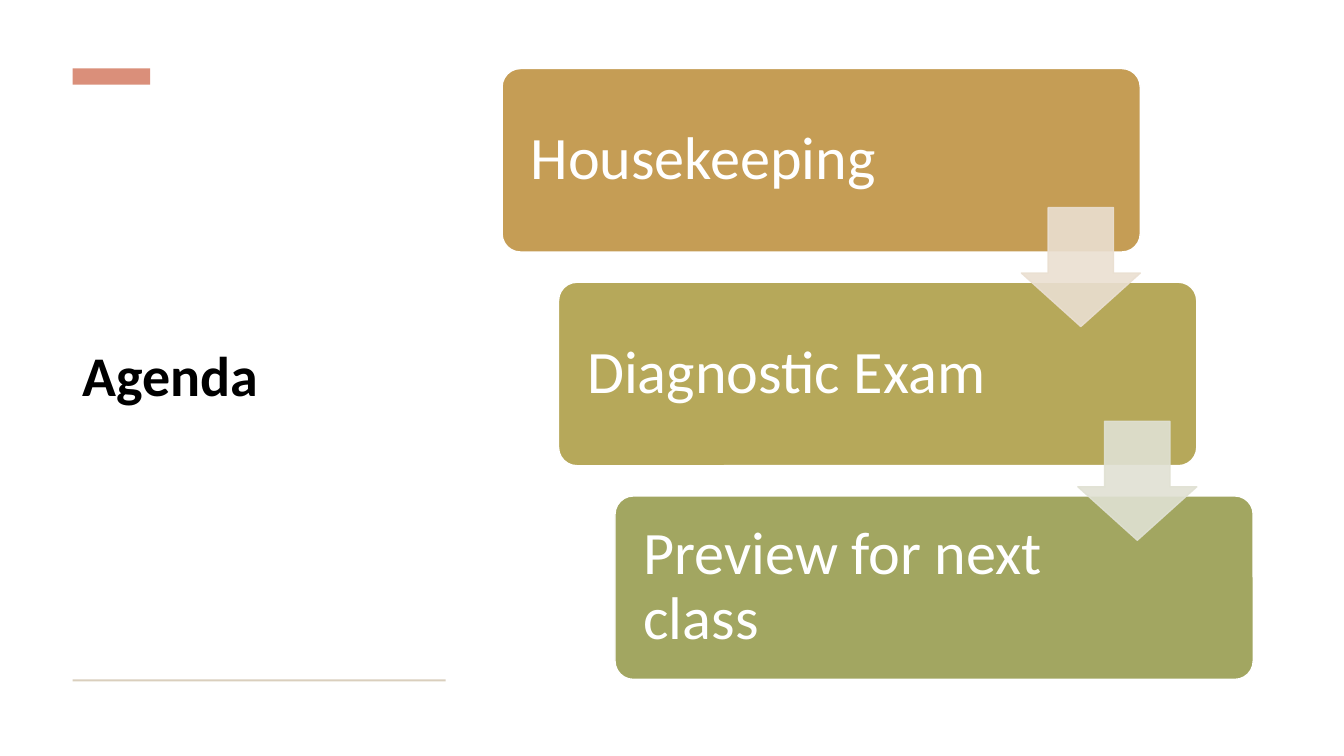
from lxml.etree import SubElement
from pptx import Presentation
from pptx.dml.color import RGBColor
from pptx.enum.shapes import MSO_SHAPE as Shape
from pptx.enum.text import MSO_ANCHOR as Anchor, PP_ALIGN as Align
from pptx.oxml.ns import qn
from pptx.util import Pt

PX = 9144
COLORS = {
    "white": "FFFFFF", "black": "000000", "accent": "DA8F7A", "rule": "DACFBD",
    "gold": "C59D55", "olive": "B6A85A", "green": "A2A661",
    "sand": "EADFD1", "sage": "E0E1D3",
}
TITLE = "Agenda"
STEPS = [("Housekeeping", "gold"), ("Diagnostic Exam", "olive"), ("Preview for next class", "green")]
ARROWS = ["sand", "sage"]

STEP_LEFT, STEP_TOP, STEP_WIDTH, STEP_HEIGHT = 498, 68, 633, 182
SHIFT_X, SHIFT_Y = 56, 212
ARROW_LEFT, ARROW_TOP, ARROW_SIZE = 1013, 206, 118
TEXT_INSETS = (23, 23, 197, 23)
ARROW_ALPHA = 90

deck = Presentation()
deck.slide_width, deck.slide_height = 1333 * PX, 750 * PX
page = deck.slides.add_slide(deck.slide_layouts[6])


def color(name):
    return RGBColor.from_string(COLORS[name])


def add_block(kind, left, top, width, height, fill, line=None, adjustments=()):
    block = page.shapes.add_shape(kind, left * PX, top * PX, width * PX, height * PX)
    block.shadow.inherit = False
    block.fill.solid()
    block.fill.fore_color.rgb = color(fill)
    if line:
        block.line.color.rgb = color(line)
        block.line.width = Pt(1)
    else:
        block.line.fill.background()
    for index, value in enumerate(adjustments):
        block.adjustments[index] = value
    return block


def write(box, text, size, ink, insets, bold=False):
    frame = box.text_frame
    frame.word_wrap = True
    frame.vertical_anchor = Anchor.MIDDLE
    frame.margin_left, frame.margin_top, frame.margin_right, frame.margin_bottom = (
        inset * PX for inset in insets)
    para = frame.paragraphs[0]
    para.text = text
    para.alignment = Align.LEFT
    para.line_spacing = 0.9
    para.font.name = "Calibri"
    para.font.size = Pt(size)
    para.font.bold = bold
    para.font.color.rgb = color(ink)


title = page.shapes.add_textbox(72 * PX, 105 * PX, 370 * PX, 541 * PX)
write(title, TITLE, 40, "black", (10, 5, 10, 5), bold=True)
add_block(Shape.RECTANGLE, 72, 68, 77, 16, "accent")
add_block(Shape.RECTANGLE, 72, 674, 370, 2, "rule")

for row, (label, fill) in enumerate(STEPS):
    step = add_block(Shape.ROUNDED_RECTANGLE, STEP_LEFT + row * SHIFT_X, STEP_TOP + row * SHIFT_Y,
                     STEP_WIDTH, STEP_HEIGHT, fill, "white", (0.1,))
    write(step, label, 43, "white", TEXT_INSETS)

for row, fill in enumerate(ARROWS):
    arrow = add_block(Shape.DOWN_ARROW, ARROW_LEFT + row * SHIFT_X, ARROW_TOP + row * SHIFT_Y,
                      ARROW_SIZE, ARROW_SIZE, fill, fill, (0.55, 0.45))
    for paint in arrow.element.spPr.iter(qn("a:srgbClr")):
        SubElement(paint, qn("a:alpha"), val=str(ARROW_ALPHA * 1000))

deck.save("out.pptx")
